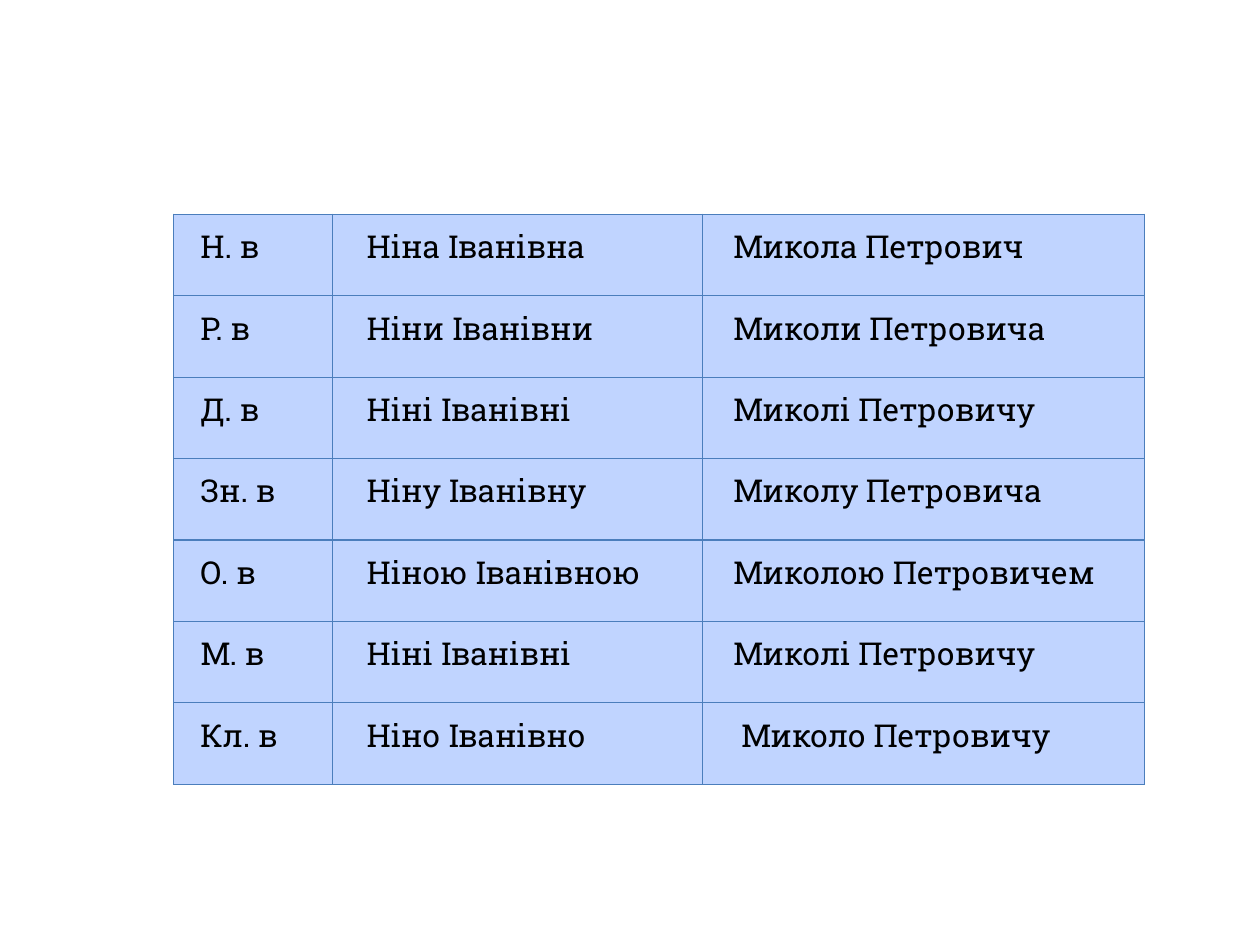
from lxml import etree
from pptx import Presentation
from pptx.dml.color import RGBColor
from pptx.enum.text import MSO_ANCHOR
from pptx.oxml.ns import qn
from pptx.util import Pt

TOP = MSO_ANCHOR.TOP
FONT = "Roboto Slab"
COLORS = {"fill": "C0D4FF", "border": "4B7EBC", "text": "000000"}
DECLENSION = [
    ("Н. в", "Ніна Іванівна", "Микола Петрович"),
    ("Р. в", "Ніни Іванівни", "Миколи Петровича"),
    ("Д. в", "Ніні Іванівні", "Миколі Петровичу"),
    ("Зн. в", "Ніну Іванівну", "Миколу Петровича"),
    ("О. в", "Ніною Іванівною", "Миколою Петровичем"),
    ("М. в", "Ніні Іванівні", "Миколі Петровичу"),
    ("Кл. в", "Ніно Іванівно", " Миколо Петровичу"),
]
COLUMN_WIDTHS = [90.8, 211.5, 252.7]
FIRST_LINE_INDENTS = [8.8, 13, 11]
TABLE_LEFT, TABLE_TOP = 99.2, 122.4
ROW_HEIGHT = 46.57
CELL_MARGIN = 6.5
BORDER_WIDTH = 0.75


def add_borders(cell):
    """Draw a thin line on every side of a table cell."""
    properties = cell._tc.get_or_add_tcPr()
    for position, side in enumerate(("a:lnL", "a:lnR", "a:lnT", "a:lnB")):
        line = etree.Element(qn(side), w=str(Pt(BORDER_WIDTH)))
        solid = etree.SubElement(line, qn("a:solidFill"))
        etree.SubElement(solid, qn("a:srgbClr"), val=COLORS["border"])
        properties.insert(position, line)


def format_cell(cell, text, indent):
    """Fill a table cell with one indented line of text."""
    cell.fill.solid()
    cell.fill.fore_color.rgb = RGBColor.from_string(COLORS["fill"])
    cell.margin_left = cell.margin_right = Pt(CELL_MARGIN)
    cell.margin_top = cell.margin_bottom = Pt(CELL_MARGIN)
    cell.vertical_anchor = TOP
    add_borders(cell)
    paragraph = cell.text_frame.paragraphs[0]
    paragraph_properties = paragraph._p.get_or_add_pPr()
    paragraph_properties.set("marL", "0")
    paragraph_properties.set("indent", str(Pt(indent)))
    run = paragraph.add_run()
    run.text = text
    run.font.name = FONT
    run.font.size = Pt(18)
    run.font.bold = False
    run.font.color.rgb = RGBColor.from_string(COLORS["text"])


def main():
    """Build the declension table slide."""
    presentation = Presentation()
    presentation.slide_width, presentation.slide_height = Pt(720), Pt(540)
    slide = presentation.slides.add_slide(presentation.slide_layouts[6])
    table = slide.shapes.add_table(
        len(DECLENSION), len(COLUMN_WIDTHS), Pt(TABLE_LEFT), Pt(TABLE_TOP),
        Pt(sum(COLUMN_WIDTHS)), Pt(ROW_HEIGHT * len(DECLENSION)),
    ).table
    table.first_row = table.horz_banding = False
    for column, width in zip(table.columns, COLUMN_WIDTHS):
        column.width = Pt(width)
    for row, texts in zip(table.rows, DECLENSION):
        row.height = Pt(ROW_HEIGHT)
        for cell, text, indent in zip(row.cells, texts, FIRST_LINE_INDENTS):
            format_cell(cell, text, indent)
    presentation.save("out.pptx")


if __name__ == "__main__":
    main()
